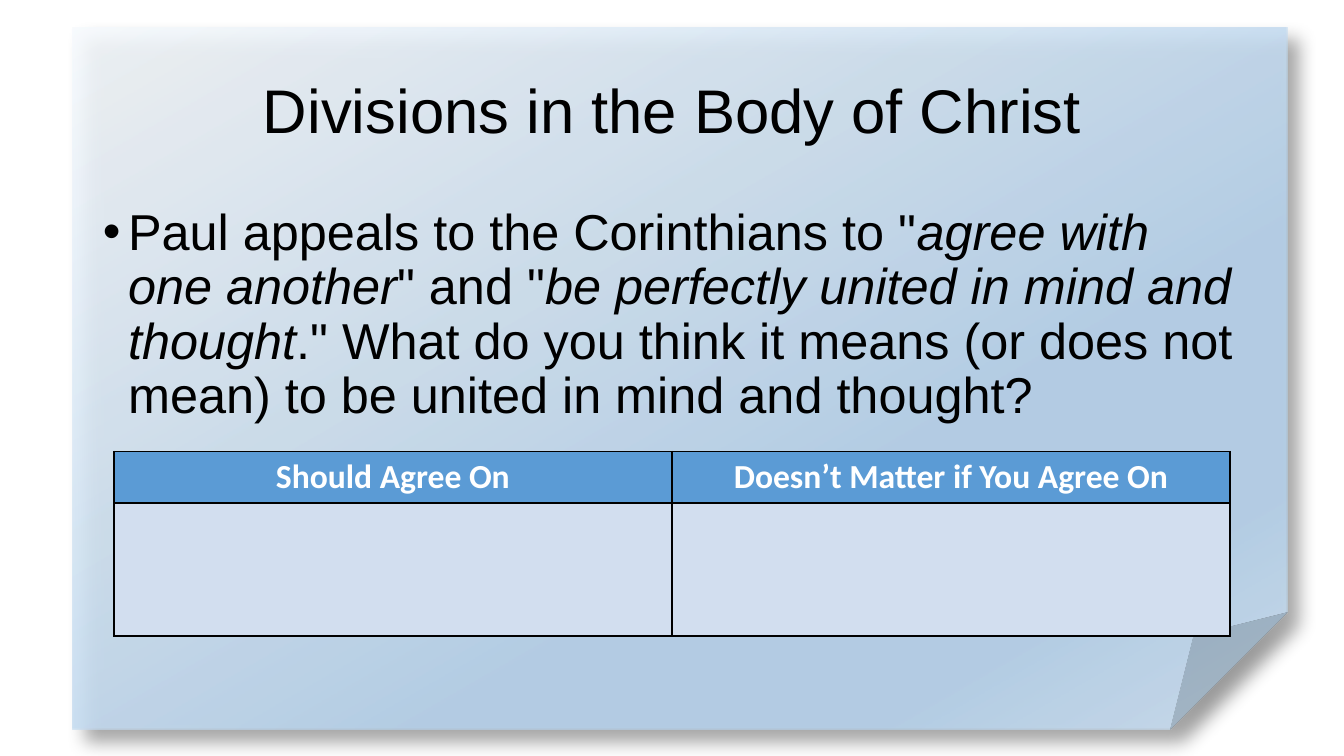
from lxml import etree
from pptx import Presentation
from pptx.dml.color import RGBColor
from pptx.enum.shapes import MSO_SHAPE
from pptx.enum.text import MSO_ANCHOR, MSO_AUTO_SIZE, PP_ALIGN
from pptx.oxml import parse_xml
from pptx.util import Inches, Pt

FOLD = MSO_SHAPE.FOLDED_CORNER
TOP, MIDDLE = MSO_ANCHOR.TOP, MSO_ANCHOR.MIDDLE
LEFT, CENTER = PP_ALIGN.LEFT, PP_ALIGN.CENTER
FIXED = MSO_AUTO_SIZE.NONE
NS = 'xmlns:a="http://schemas.openxmlformats.org/drawingml/2006/main"'
STOPS = [(0, "F7FAFD"), (64, "B5D2EC"), (83, "B5D2EC"), (100, "CEE1F2")]
HEADS = ["Should Agree On", "Doesn’t Matter if You Agree On"]
ROWS = [0.51, 1.32]
PARTS = [
    ('Paul appeals to the Corinthians to "', False),
    ("agree with one another", True),
    ('" and "', False),
    ("be perfectly united in mind and thought", True),
    ('." What do you think it means (or does not mean) to be united in mind and thought?', False),
]


def color(code):
    return RGBColor.from_string(code)


def write(para, text, font="Arial", size=36, ink="000000", bold=False,
          italic=False, align=LEFT):
    para.alignment = align
    run = para.add_run()
    run.text = text
    face = run.font
    face.name, face.size = font, Pt(size)
    face.bold, face.italic = bold, italic
    face.color.rgb = color(ink)


def place(shape, left, top, width, height):
    shape.left, shape.top = Inches(left), Inches(top)
    shape.width, shape.height = Inches(width), Inches(height)


def frame(holder, box, anchor):
    place(holder, *box)
    text = holder.text_frame
    text.word_wrap = True
    text.auto_size = FIXED
    text.vertical_anchor = anchor
    para = text.paragraphs[0]
    para.line_spacing = 0.9
    return para


def add_page(slide):
    page = slide.shapes.add_shape(
        FOLD, Inches(0.72), Inches(0.27), Inches(12.05), Inches(6.97))
    page.line.fill.background()
    page.fill.background()
    props = page.fill._xPr
    stops = "".join(
        f'<a:gs pos="{pos * 1000}"><a:srgbClr val="{code}">'
        '<a:alpha val="87000"/></a:srgbClr></a:gs>' for pos, code in STOPS)
    blend = parse_xml(
        f'<a:gradFill {NS} rotWithShape="1"><a:gsLst>{stops}</a:gsLst>'
        '<a:lin ang="3600000" scaled="0"/></a:gradFill>')
    props.replace(props.find("{*}noFill"), blend)
    props.append(parse_xml(
        f'<a:effectLst {NS}><a:outerShdw blurRad="{Pt(13)}" dist="{Pt(13)}" '
        'dir="2700000" algn="tl" rotWithShape="0"><a:srgbClr val="000000">'
        '<a:alpha val="40000"/></a:srgbClr></a:outerShdw></a:effectLst>'))
    slide.shapes._spTree.insert(2, page._element)


def add_title(slide):
    para = frame(slide.shapes.title, (0.92, 0.4, 11.5, 1.45), MIDDLE)
    write(para, "Divisions in the Body of Christ", size=44, align=CENTER)


def add_body(slide):
    para = frame(slide.placeholders[1], (0.92, 2, 11.5, 4.76), TOP)
    para.space_before = Pt(10)
    for text, slant in PARTS:
        write(para, text, italic=slant)
    props = para._p.get_or_add_pPr()
    props.set("marL", str(Inches(0.25)))
    props.set("indent", str(Inches(-0.25)))
    props.append(parse_xml(f'<a:buFont {NS} typeface="Arial"/>'))
    props.append(parse_xml(f'<a:buChar {NS} char="•"/>'))


def style(cell, fill):
    props = cell._tc.get_or_add_tcPr()
    for side in "LRTB":
        props.append(etree.fromstring(
            f'<a:ln{side} {NS} w="{Pt(1)}"><a:solidFill>'
            f'<a:srgbClr val="000000"/></a:solidFill></a:ln{side}>'))
    cell.fill.solid()
    cell.fill.fore_color.rgb = color(fill)


def add_grid(slide):
    grid = slide.shapes.add_table(
        len(ROWS), len(HEADS), Inches(1.13), Inches(4.48),
        Inches(11.07), Inches(sum(ROWS))).table
    for row, high in zip(grid.rows, ROWS):
        row.height = Inches(high)
    for col, head in enumerate(HEADS):
        top = grid.cell(0, col)
        style(top, "5B9BD5")
        write(top.text_frame.paragraphs[0], head, font="Calibri", size=24,
              ink="FFFFFF", bold=True, align=CENTER)
        style(grid.cell(1, col), "D2DEEF")


def main():
    deck = Presentation()
    deck.slide_width, deck.slide_height = Inches(13.33), Inches(7.5)
    slide = deck.slides.add_slide(deck.slide_layouts[1])
    add_page(slide)
    add_title(slide)
    add_body(slide)
    add_grid(slide)
    deck.save("out.pptx")


if __name__ == "__main__":
    main()
